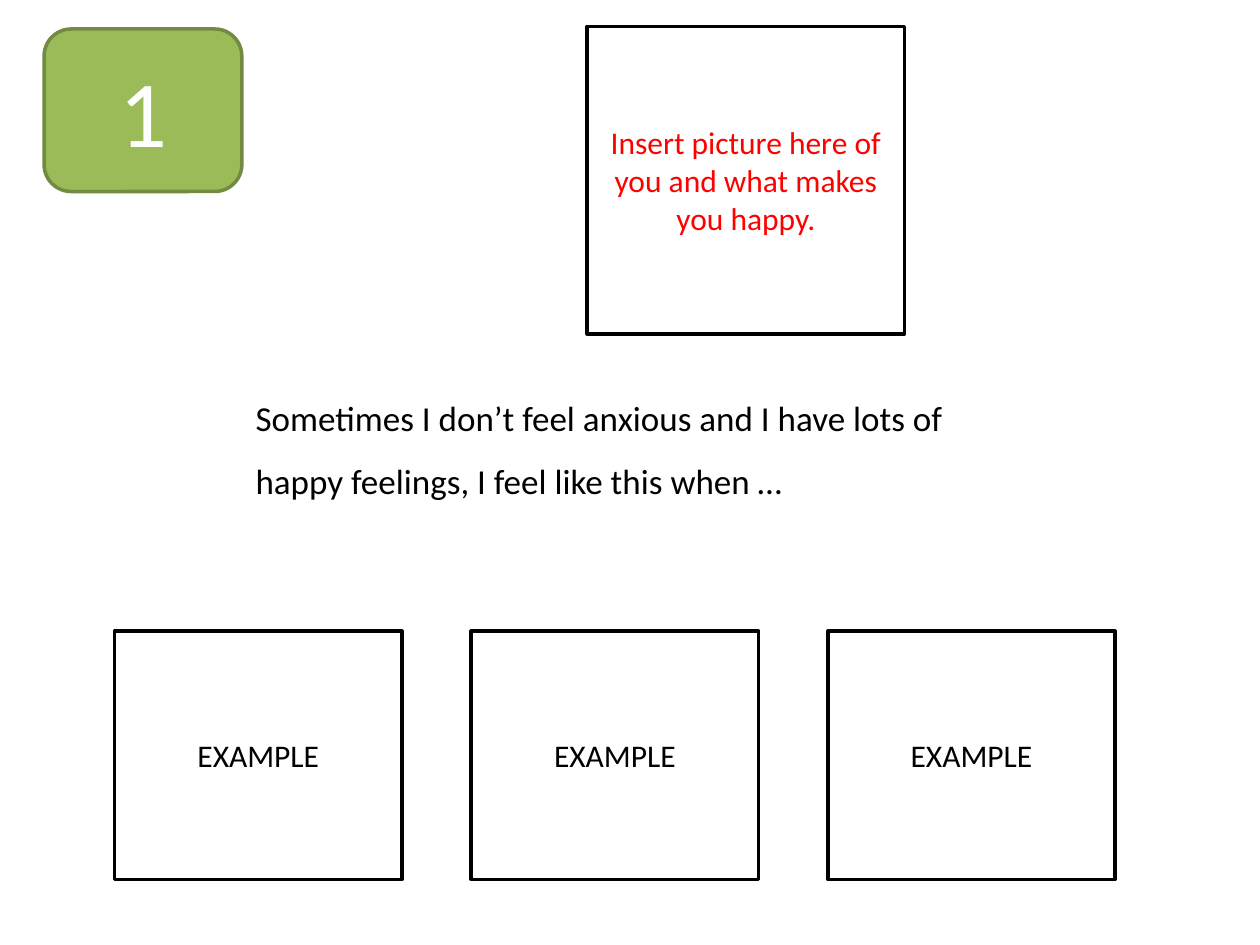
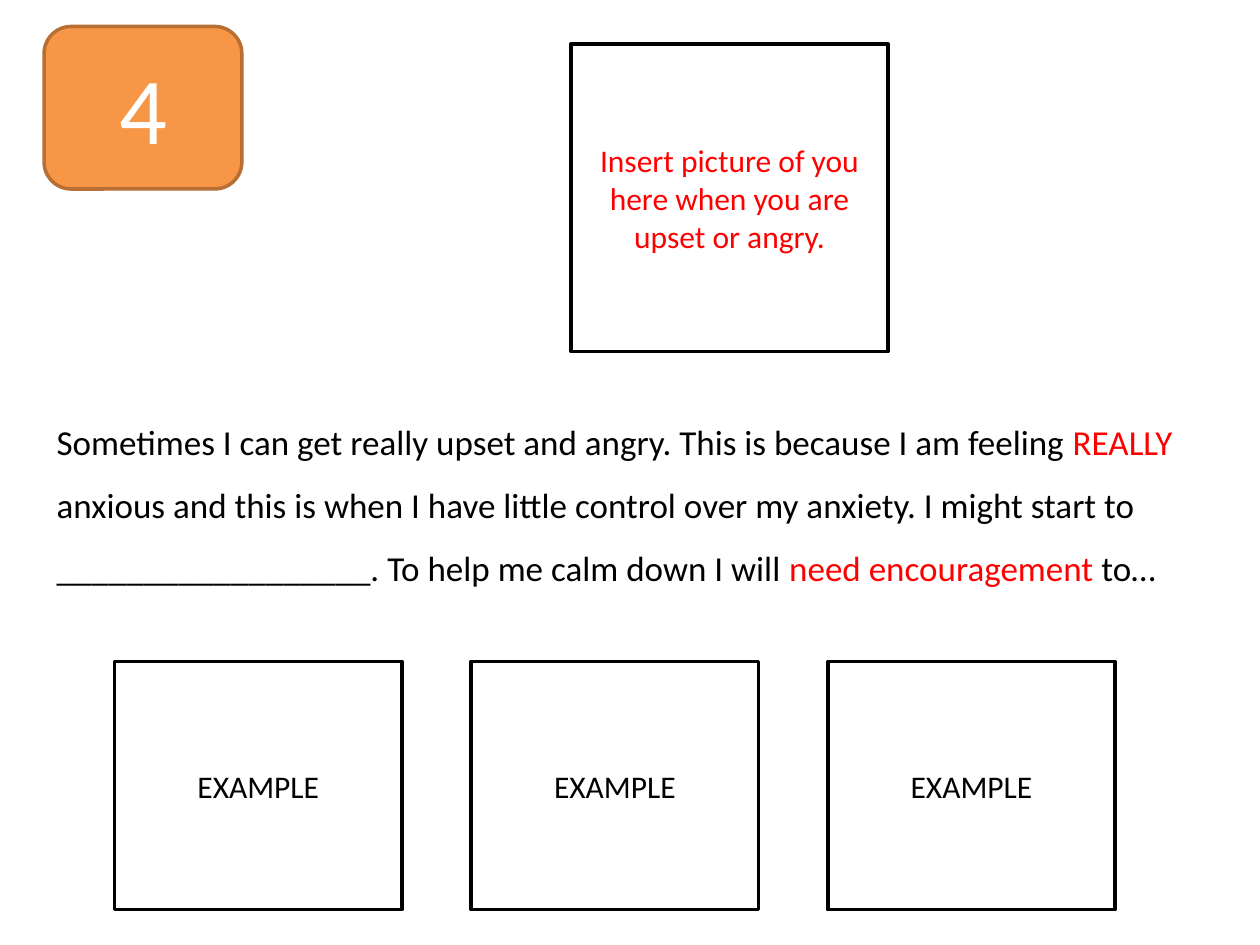
from pptx import Presentation
from pptx.dml.color import RGBColor
from pptx.enum.shapes import MSO_SHAPE
from pptx.enum.text import MSO_ANCHOR, PP_ALIGN
from pptx.util import Inches, Pt

RECTANGLE, ROUNDED = MSO_SHAPE.RECTANGLE, MSO_SHAPE.ROUNDED_RECTANGLE
TOP, MIDDLE = MSO_ANCHOR.TOP, MSO_ANCHOR.MIDDLE
LEFT, CENTER = PP_ALIGN.LEFT, PP_ALIGN.CENTER
BLACK, RED, WHITE = "000000", "FF0000", "FFFFFF"

EXAMPLE_COLUMNS, EXAMPLE_LEFT, EXAMPLE_PITCH = 3, 0.91, 2.83
EXAMPLE_SIZE = (2.28, 1.97)
PICTURE_SIZE = (2.52, 2.44)
BADGE_LEFT, BADGE_SIZE = 0.35, (1.57, 1.29)
NUMBER_SIZE = (0.59, 1.01)

LABEL = {"size": 18, "align": CENTER, "anchor": MIDDLE, "spacing": 1.0, "wrap": True}
STORY = {"size": 20, "align": LEFT, "anchor": TOP, "spacing": 1.5, "wrap": True}
NUMBER = {"size": 54, "align": CENTER, "anchor": TOP, "spacing": 1.0, "wrap": False}


def add_panel(shapes, kind, box, fill, outline):
    panel = shapes.add_shape(kind, *map(Inches, box))
    panel.shadow.inherit = False
    panel.fill.solid()
    panel.fill.fore_color.rgb = RGBColor.from_string(fill)
    panel.line.color.rgb = RGBColor.from_string(outline)
    panel.line.width = Pt(2)
    return panel


def write(holder, runs, style):
    frame = holder.text_frame
    frame.word_wrap = style["wrap"]
    frame.vertical_anchor = style["anchor"]
    paragraph = frame.paragraphs[0]
    paragraph.alignment = style["align"]
    paragraph.line_spacing = style["spacing"]
    for words, colour in runs:
        run = paragraph.add_run()
        run.text = words
        run.font.color.rgb = RGBColor.from_string(colour)
        for attribute, value in {"name": "Calibri", "size": Pt(style["size"])}.items():
            setattr(run.font, attribute, value)


levels = [
    {
        "number": "1",
        "badge_top": 0.23,
        "badge_fill": "9BBB59",
        "badge_line": "738A42",
        "picture_at": (4.66, 0.21),
        "prompt": "Insert picture here of you and what makes you happy.",
        "story_box": (1.93, 2.93, 5.67, 1.11),
        "story": [
            ("Sometimes I don’t feel anxious and I have lots of happy feelings, "
             "I feel like this when …", BLACK),
        ],
        "examples_top": 5.01,
    },
    {
        "number": "4",
        "badge_top": 0.21,
        "badge_fill": "F79646",
        "badge_line": "B76F34",
        "picture_at": (4.53, 0.35),
        "prompt": "Insert picture of you here when you are upset or angry.",
        "story_box": (0.35, 3.12, 9.21, 1.62),
        "story": [
            ("Sometimes I can get really upset and angry. This is because I am feeling ", BLACK),
            ("REALLY", RED),
            (" anxious and this is when I have little control over my anxiety. "
             "I might start to __________________. To help me calm down I will ", BLACK),
            ("need encouragement", RED),
            (" to…", BLACK),
        ],
        "examples_top": 5.25,
    },
]

deck = Presentation()
deck.slide_width, deck.slide_height = Inches(10), Inches(7.5)
blank_layout = deck.slide_layouts[6]

for level in levels:
    shapes = deck.slides.add_slide(blank_layout).shapes

    badge = shapes.add_group_shape().shapes
    badge_box = (BADGE_LEFT, level["badge_top"], *BADGE_SIZE)
    add_panel(badge, ROUNDED, badge_box, level["badge_fill"], level["badge_line"])
    number_left = BADGE_LEFT + (BADGE_SIZE[0] - NUMBER_SIZE[0]) / 2
    number_top = level["badge_top"] + (BADGE_SIZE[1] - NUMBER_SIZE[1]) / 2
    number = badge.add_textbox(*map(Inches, (number_left, number_top, *NUMBER_SIZE)))
    write(number, [(level["number"], WHITE)], NUMBER)

    picture_box = (*level["picture_at"], *PICTURE_SIZE)
    picture_space = add_panel(shapes, RECTANGLE, picture_box, WHITE, BLACK)
    write(picture_space, [(level["prompt"], RED)], LABEL)

    story = shapes.add_textbox(*map(Inches, level["story_box"]))
    write(story, level["story"], STORY)

    for column in range(EXAMPLE_COLUMNS):
        example_left = EXAMPLE_LEFT + column * EXAMPLE_PITCH
        example_box = (example_left, level["examples_top"], *EXAMPLE_SIZE)
        example = add_panel(shapes, RECTANGLE, example_box, WHITE, BLACK)
        write(example, [("EXAMPLE", BLACK)], LABEL)

deck.save("out.pptx")
